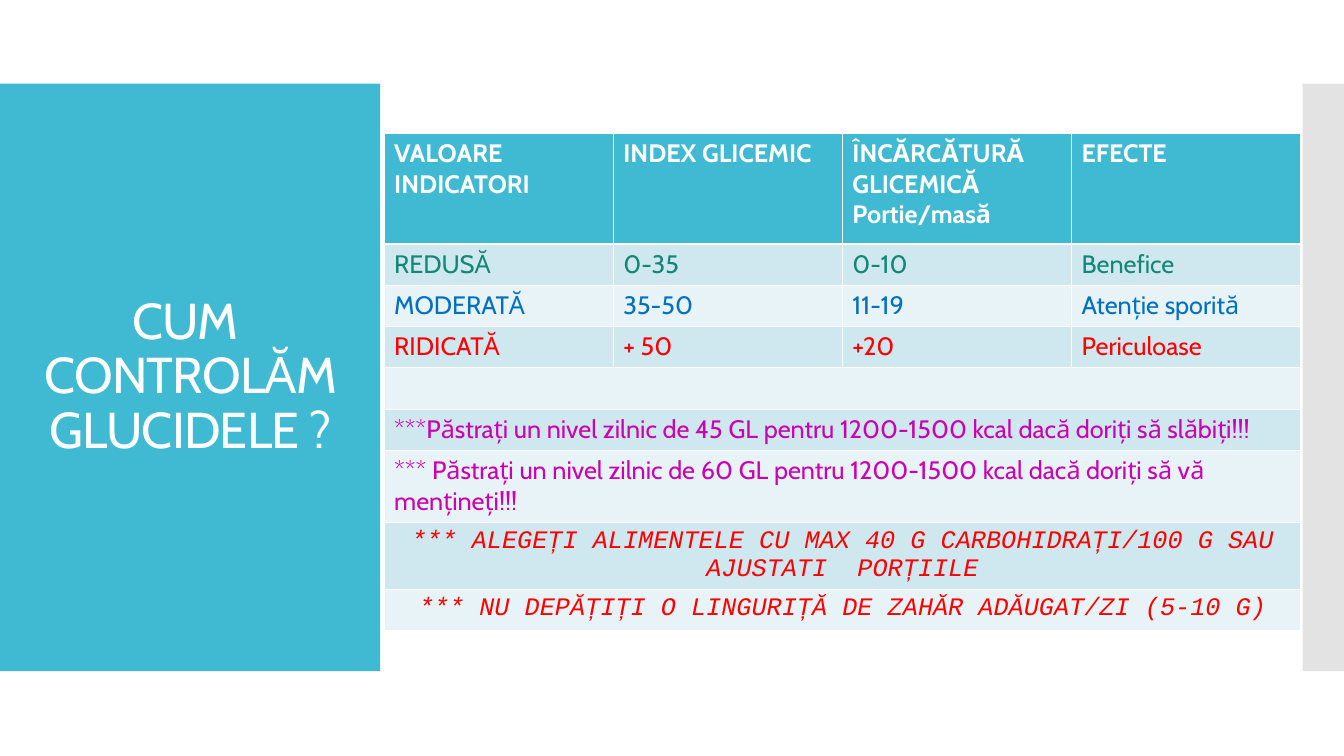
from dataclasses import dataclass

from lxml.etree import SubElement
from pptx import Presentation
from pptx.dml.color import RGBColor
from pptx.enum.shapes import MSO_SHAPE
from pptx.enum.text import MSO_ANCHOR, MSO_AUTO_SIZE, PP_ALIGN
from pptx.oxml.ns import qn
from pptx.util import Inches, Pt


@dataclass(frozen=True)
class Theme:
    font: str = "Cabin"
    mono: str = "Courier New"
    title: int = 36
    body: int = 18
    teal: str = "40BAD2"
    gray: str = "C8C8C8"
    white: str = "FFFFFF"
    green: str = "138677"
    blue: str = "0070C0"
    red: str = "FF0000"
    pink: str = "CB00B1"
    bands: tuple = ("CFE7EE", "E8F3F7")


theme = Theme()


def style(frame, size, color, font=theme.font, bold=False, italic=False, align=None):
    for para in frame.paragraphs:
        para.alignment = align
        for run in para.runs:
            face = run.font
            face.name, face.size = font, Pt(size)
            face.bold, face.italic = bold, italic
            face.color.rgb = RGBColor.from_string(color)


deck = Presentation()
deck.slide_width, deck.slide_height = Inches(13.33), Inches(7.5)
slide = deck.slides.add_slide(deck.slide_layouts[5])
title = slide.shapes.title

# Side panels, behind the title
for left, width, color in ((0, 3.77, theme.teal), (12.92, 0.41, theme.gray)):
    panel = slide.shapes.add_shape(
        MSO_SHAPE.RECTANGLE, Inches(left), Inches(0.83), Inches(width), Inches(5.83))
    panel.shadow.inherit = False
    panel.fill.solid()
    panel.fill.fore_color.rgb = RGBColor.from_string(color)
    panel.line.fill.background()
    title.element.addprevious(panel.element)
    if color == theme.gray:
        tint = panel.element.spPr.find(".//" + qn("a:srgbClr"))
        SubElement(tint, qn("a:alpha")).set("val", "50000")

# Title
title.left, title.top = Inches(0.28), Inches(1.23)
title.width, title.height = Inches(3.22), Inches(5.03)
frame = title.text_frame
frame.text = "CUM \vCONTROLĂM GLUCIDELE ?"
frame.word_wrap = True
frame.auto_size = MSO_AUTO_SIZE.NONE
frame.vertical_anchor = MSO_ANCHOR.MIDDLE
frame.paragraphs[0].line_spacing = 0.9
style(frame, theme.title, theme.white, align=PP_ALIGN.CENTER)
for run in frame.paragraphs[0].runs:
    run.font.element.set("spc", "-60") if hasattr(run.font, "element") else \
        run._r.get_or_add_rPr().set("spc", "-60")

# Table content: texts and text format of each row
head = dict(color=theme.white, bold=True)
note = dict(color=theme.pink)
alert = dict(color=theme.red, font=theme.mono, italic=True, align=PP_ALIGN.CENTER)
rows = [
    (["VALOARE INDICATORI", "INDEX GLICEMIC",
      "ÎNCĂRCĂTURĂ GLICEMICĂ\nPortie/masă", "EFECTE"], head),
    (["REDUSĂ", "0-35", "0-10", "Benefice"], dict(color=theme.green)),
    (["MODERATĂ", "35-50", "11-19", "Atenție sporită"], dict(color=theme.blue)),
    (["RIDICATĂ", "+ 50", "+20", "Periculoase"], dict(color=theme.red)),
    ([""], note),
    (["***Păstrați un nivel zilnic de 45 GL pentru 1200-1500 kcal "
      "dacă doriți să slăbiți!!!"], note),
    (["*** Păstrați un nivel zilnic de 60 GL pentru 1200-1500 kcal "
      "dacă doriți să vă mențineți!!!"], note),
    (["*** ALEGEȚI ALIMENTELE CU MAX 40 G CARBOHIDRAȚI/100 G SAU "
      "AJUSTATI  PORȚIILE"], alert),
    (["*** NU DEPĂȚIȚI O LINGURIȚĂ DE ZAHĂR ADĂUGAT/ZI (5-10 G)"], alert),
]

# Table; single texts span the full row
table = slide.shapes.add_table(
    len(rows), 4, Inches(3.81), Inches(1.32), Inches(9.09), Inches(4.38)).table
for r, (texts, look) in enumerate(rows):
    table.rows[r].height = Inches(0.41 if r else 1.1)
    fill = theme.bands[(r - 1) % 2] if r else theme.teal
    if len(texts) == 1:
        table.cell(r, 0).merge(table.cell(r, 3))
    for c, text in enumerate(texts):
        cell = table.cell(r, c)
        cell.fill.solid()
        cell.fill.fore_color.rgb = RGBColor.from_string(fill)
        cell.text_frame.text = text
        style(cell.text_frame, theme.body, **look)

deck.save("out.pptx")
